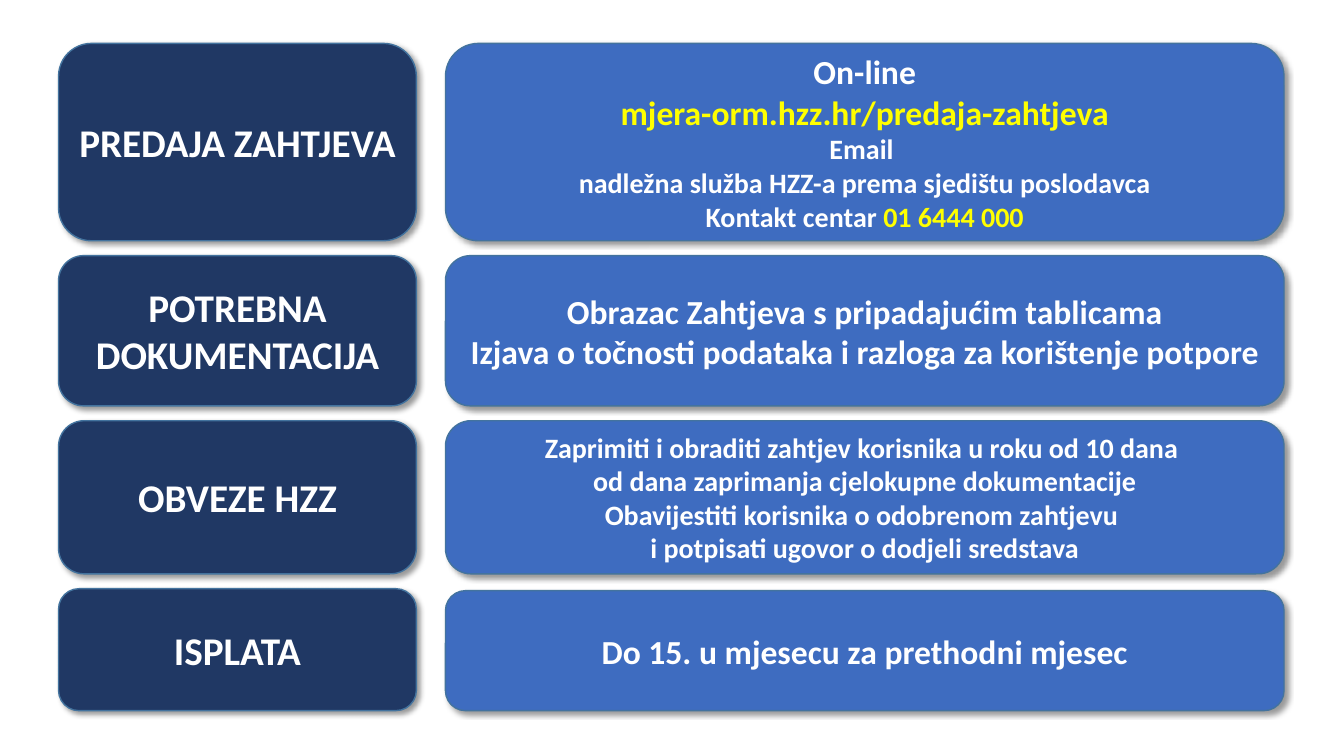
"""Build a slide of four labelled steps for filing a support request."""
from lxml import etree
from pptx import Presentation
from pptx.dml.color import RGBColor
from pptx.enum.shapes import MSO_SHAPE
from pptx.enum.text import MSO_ANCHOR, PP_ALIGN
from pptx.oxml.ns import qn
from pptx.util import Pt

ROUND = MSO_SHAPE.ROUNDED_RECTANGLE
MIDDLE = MSO_ANCHOR.MIDDLE
CENTER = PP_ALIGN.CENTER
NAVY, BLUE, EDGE = "203864", "3E6CC0", "43739E"
WHITE, YELLOW = "FFFFFF", "FFFF00"
TOP, GAP = 31, 10.6


def color(code):
    return RGBColor.from_string(code)


def add_box(left, top, width, height, fill, lines):
    box = slide.shapes.add_shape(ROUND, Pt(left), Pt(top), Pt(width), Pt(height))
    box.fill.solid()
    box.fill.fore_color.rgb = color(fill)
    box.line.color.rgb = color(EDGE)
    box.line.width = Pt(1)
    box.shadow.inherit = False
    effects = box.element.spPr.find(qn("a:effectLst"))
    shadow = etree.SubElement(effects, qn("a:outerShdw"), blurRad=str(Pt(4)),
                              dist=str(Pt(3)), dir="2700000", algn="tl", rotWithShape="0")
    tint = etree.SubElement(shadow, qn("a:srgbClr"), val="000000")
    etree.SubElement(tint, qn("a:alpha"), val="40000")

    frame = box.text_frame
    frame.word_wrap = True
    frame.vertical_anchor = MIDDLE
    for i, (size, text, accent) in enumerate(lines):
        para = frame.add_paragraph() if i else frame.paragraphs[0]
        para.text = text
        para.alignment = CENTER
        para.font.name = "Calibri"
        para.font.size = Pt(size)
        para.font.bold = True
        para.font.color.rgb = color(WHITE)
        if accent:
            run = para.add_run()
            run.text = accent
            run.font.color.rgb = color(YELLOW)


deck = Presentation()
deck.slide_width, deck.slide_height = Pt(960), Pt(540)
slide = deck.slides.add_slide(deck.slide_layouts[6])

steps = [
    ("PREDAJA ZAHTJEVA", 141, 0, [
        (24, "On-line", ""),
        (24, "", "mjera-orm.hzz.hr/predaja-zahtjeva"),
        (20, "Email \vnadležna služba HZZ-a prema sjedištu poslodavca", ""),
        (20, "Kontakt centar ", "01 6444 000")]),
    ("POTREBNA DOKUMENTACIJA", 107.3, 0, [
        (24, "Obrazac Zahtjeva s pripadajućim tablicama", ""),
        (24, "Izjava o točnosti podataka i razloga za korištenje potpore", "")]),
    ("OBVEZE HZZ", 109.4, 0, [
        (20, "Zaprimiti i obraditi zahtjev korisnika u roku od 10 dana \v"
             "od dana zaprimanja cjelokupne dokumentacije", ""),
        (20, "Obavijestiti korisnika o odobrenom zahtjevu \v"
             "i potpisati ugovor o dodjeli sredstava", "")]),
    ("ISPLATA", 87.1, 1.4, [
        (24, "Do 15. u mjesecu za prethodni mjesec", "")]),
]

top = TOP
for label, height, drop, lines in steps:
    add_box(41.8, top, 255.6, height, NAVY, [(28, label, "")])
    add_box(318.2, top + drop, 599, height - drop, BLUE, lines)
    top += height + GAP

deck.save("out.pptx")
